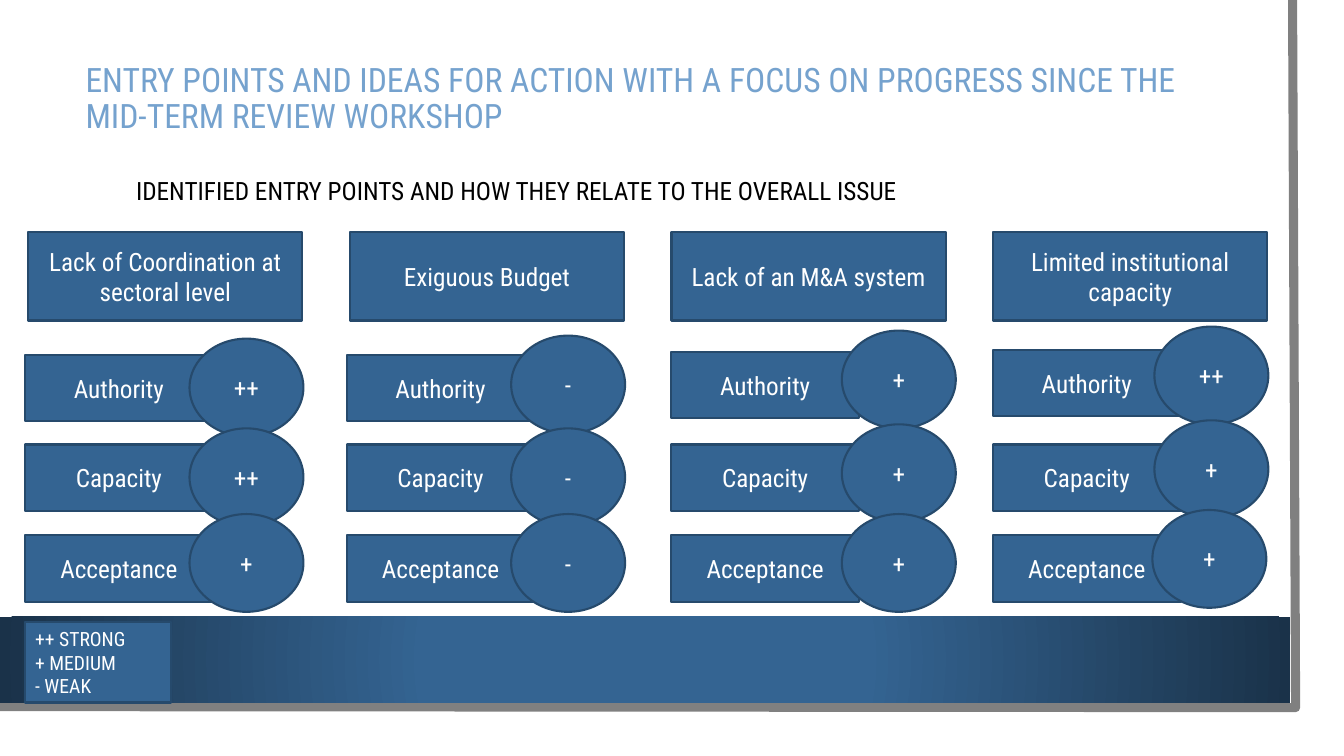
from dataclasses import dataclass
from typing import NamedTuple

from lxml import etree
from pptx import Presentation
from pptx.dml.color import RGBColor
from pptx.enum.shapes import MSO_SHAPE as Preset
from pptx.enum.text import MSO_ANCHOR as Anchor, PP_ALIGN as Align
from pptx.oxml import parse_xml
from pptx.oxml.ns import nsdecls
from pptx.util import Emu, Pt

PX = 9144  # EMU in one px, 100 px to the inch


@dataclass(frozen=True)
class Theme:
    font: str = "Roboto Condensed"
    blue: str = "346492"
    outline: str = "264A6C"
    navy: str = "1A3249"
    title: str = "75A2CE"
    frame: str = "808080"
    black: str = "000000"
    white: str = "FFFFFF"
    title_size: int = 24
    body_size: int = 18
    legend_size: int = 14
    outline_width: float = 1.5
    frame_width: float = 6.5


class Area(NamedTuple):
    left: int
    top: int
    width: int
    height: int

    def emu(self) -> list[Emu]:
        return [Emu(length * PX) for length in self]


class Rating(NamedTuple):
    mark: str
    left: int
    top: int


@dataclass(frozen=True)
class EntryPoint:
    issue: str
    bar_left: int
    first_bar_top: int
    ratings: tuple[Rating, Rating, Rating]


THEME = Theme()
CRITERIA = ("Authority", "Capacity", "Acceptance")
LOWER_BAR_TOPS = (441, 531)
HEADER_LEFT, HEADER_PITCH = 28, 319
ENTRY_POINTS = (
    EntryPoint("Lack of Coordination at sectoral level", 25, 352,
               (Rating("++", 188, 336), Rating("++", 188, 425), Rating("+", 188, 510))),
    EntryPoint("Exiguous Budget", 344, 352,
               (Rating("-", 507, 333), Rating("-", 507, 425), Rating("-", 507, 510))),
    EntryPoint("Lack of an M&A system", 666, 349,
               (Rating("+", 835, 328), Rating("+", 835, 421), Rating("+", 835, 510))),
    EntryPoint("Limited institutional capacity", 985, 347,
               (Rating("++", 1145, 324), Rating("+", 1145, 417), Rating("+", 1143, 506))),
)


def rgb(value: str) -> RGBColor:
    return RGBColor.from_string(value)


def write(shape, lines: tuple[str, ...], size: int, color: str, align=Align.LEFT,
          spacing: float = 1.0, inset: int = 10) -> None:
    """Fill the shape with one paragraph per line, centred vertically."""
    box = shape.text_frame
    frame_format = {"word_wrap": True, "vertical_anchor": Anchor.MIDDLE,
                    "margin_left": Emu(inset * PX)}
    for name, value in frame_format.items():
        setattr(box, name, value)
    for index, line in enumerate(lines):
        para = box.add_paragraph() if index else box.paragraphs[0]
        for name, value in {"alignment": align, "line_spacing": spacing}.items():
            setattr(para, name, value)
        span = para.add_run()
        span.text = line
        for name, value in {"name": THEME.font, "size": Pt(size)}.items():
            setattr(span.font, name, value)
        span.font.color.rgb = rgb(color)


def add_label(page, area: Area, *lines: str, preset=Preset.RECTANGLE,
              size: int = THEME.body_size, align=Align.CENTER) -> None:
    shape = page.shapes.add_shape(preset, *area.emu())
    shape.shadow.inherit = False
    shape.fill.solid()
    shape.fill.fore_color.rgb = rgb(THEME.blue)
    shape.line.color.rgb = rgb(THEME.outline)
    shape.line.width = Pt(THEME.outline_width)
    write(shape, lines, size, THEME.white, align)


def add_frame(page) -> None:
    builder = page.shapes.build_freeform(1282, 0, scale=PX)
    builder.add_line_segments([(1285, 702), (-3, 701)], close=False)
    frame = builder.convert_to_shape()
    frame.shadow.inherit = False
    frame.fill.background()
    frame.line.color.rgb = rgb(THEME.frame)
    frame.line.width = Pt(THEME.frame_width)


def add_footer_band(page) -> None:
    """Draw the band whose blue centre darkens outwards."""
    band = page.shapes.add_shape(Preset.RECTANGLE, *Area(0, 612, 1280, 85).emu())
    band.shadow.inherit = False
    band.line.fill.background()
    gradient = parse_xml(f'<a:gradFill {nsdecls("a")} rotWithShape="1"><a:gsLst/></a:gradFill>')
    for position, color in ((34, THEME.blue), (100, THEME.navy)):
        stop = etree.SubElement(gradient[0], gradient[0].tag.replace("gsLst", "gs"),
                                pos=str(position * 1000))
        etree.SubElement(stop, stop.tag.replace("}gs", "}srgbClr"), val=color)
    gradient.append(parse_xml(
        f'<a:path {nsdecls("a")} path="circle">'
        '<a:fillToRect l="50000" t="50000" r="50000" b="50000"/></a:path>'))
    band.fill.background()
    properties = band.element.spPr
    blank_fill = properties.find(gradient.tag.replace("gradFill", "noFill"))
    properties.replace(blank_fill, gradient)


def add_headings(page) -> None:
    title = page.shapes.add_textbox(*Area(75, 54, 1137, 90).emu())
    write(title, ("ENTRY POINTS AND IDEAS FOR ACTION WITH A FOCUS ON PROGRESS "
                  "SINCE THE MID-TERM REVIEW WORKSHOP",),
          THEME.title_size, THEME.title, spacing=0.9)
    subtitle = page.shapes.add_textbox(*Area(75, 160, 1010, 51).emu())
    write(subtitle, ("IDENTIFIED ENTRY POINTS AND HOW THEY RELATE TO THE OVERALL ISSUE",),
          THEME.body_size, THEME.black, spacing=1.2, inset=60)


def add_entry_point(page, column: int, entry: EntryPoint) -> None:
    add_label(page, Area(HEADER_LEFT + column * HEADER_PITCH, 230, 272, 88), entry.issue)
    bar_tops = (entry.first_bar_top, *LOWER_BAR_TOPS)
    for criterion, top in zip(CRITERIA, bar_tops):
        add_label(page, Area(entry.bar_left, top, 186, 66), criterion)
    for rating in entry.ratings:
        add_label(page, Area(rating.left, rating.top, 113, 97), rating.mark,
                  preset=Preset.OVAL)


def main() -> None:
    deck = Presentation()
    deck.slide_width, deck.slide_height = Emu(1333 * PX), Emu(750 * PX)
    page = deck.slides.add_slide(deck.slide_layouts[6])
    add_frame(page)
    add_footer_band(page)
    add_headings(page)
    for column, entry in enumerate(ENTRY_POINTS):
        add_entry_point(page, column, entry)
    add_label(page, Area(25, 617, 145, 80), "++ STRONG", "+ MEDIUM", "- WEAK",
              size=THEME.legend_size, align=Align.LEFT)
    deck.save("out.pptx")


if __name__ == "__main__":
    main()
